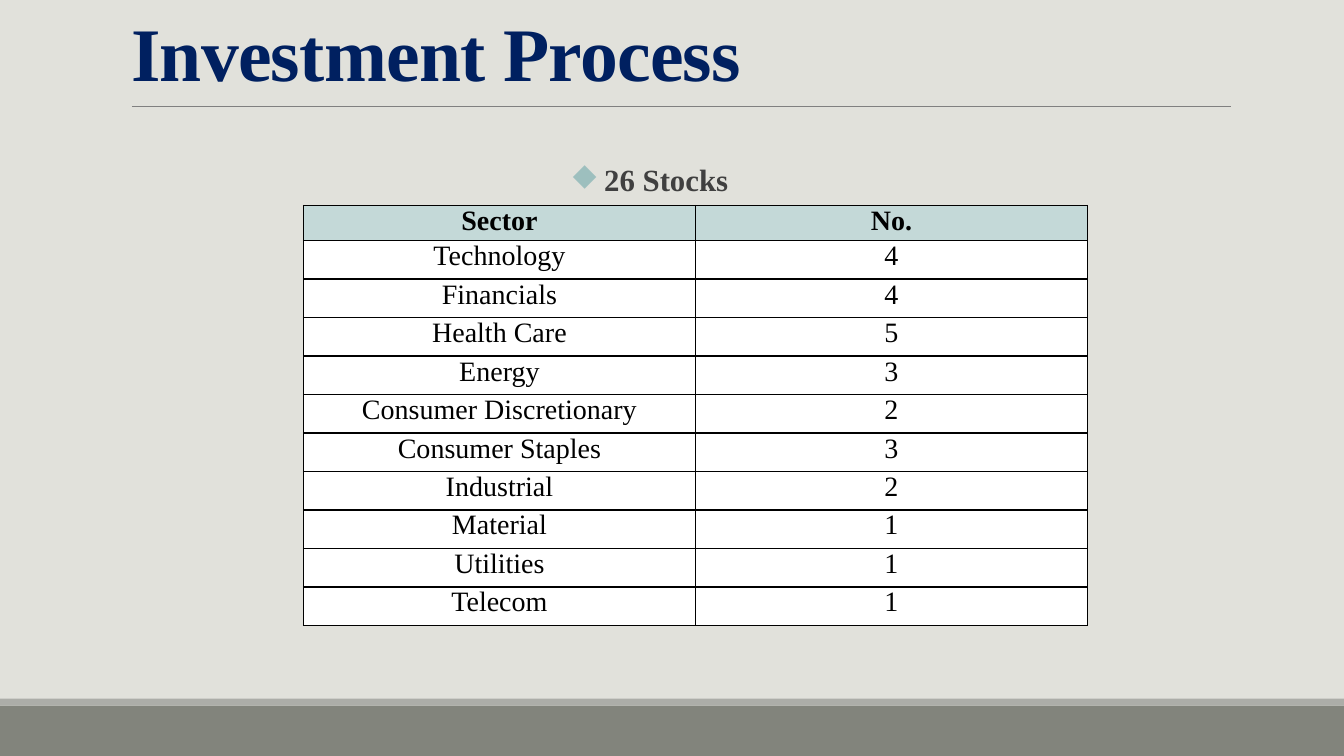
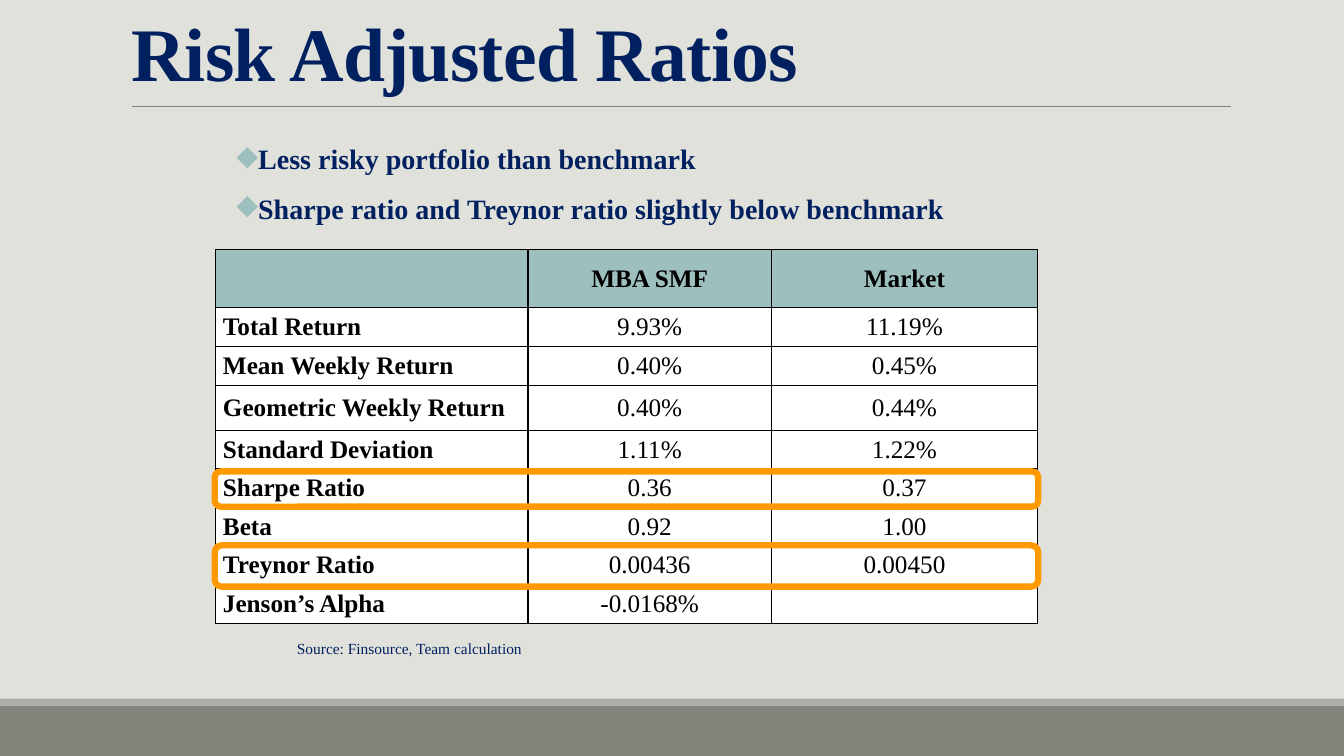
from dataclasses import dataclass

from lxml.etree import SubElement
from pptx import Presentation
from pptx.dml.color import RGBColor
from pptx.enum.shapes import MSO_CONNECTOR, MSO_SHAPE
from pptx.enum.text import MSO_ANCHOR, MSO_AUTO_SIZE, PP_ALIGN
from pptx.oxml import parse_xml
from pptx.oxml.ns import nsdecls, qn
from pptx.util import Pt


@dataclass(frozen=True)
class Theme:
    font: str = "Times New Roman"
    background: str = "E1E1DB"
    band: str = "82847C"
    band_edge: str = "ACADA8"
    rule: str = "808080"
    navy: str = "002060"
    gray: str = "404040"
    black: str = "000000"
    white: str = "FFFFFF"
    teal: str = "9DBFBE"
    pale_teal: str = "C4D9D8"
    orange: str = "FF9900"
    title_size: int = 54
    heading_size: int = 22
    text_size: int = 20
    ratio_size: int = 18
    source_size: int = 11


THEME = Theme()
SLIDE_WIDTH, SLIDE_HEIGHT = 960, 540
SECTORS = [
    ("Sector", "No."),
    ("Technology", "4"),
    ("Financials", "4"),
    ("Health Care", "5"),
    ("Energy", "3"),
    ("Consumer Discretionary", "2"),
    ("Consumer Staples", "3"),
    ("Industrial", "2"),
    ("Material", "1"),
    ("Utilities", "1"),
    ("Telecom", "1"),
]
RATIOS = [
    ("", "MBA SMF", "Market"),
    ("Total Return", "9.93%", "11.19%"),
    ("Mean Weekly Return", "0.40%", "0.45%"),
    ("Geometric Weekly Return", "0.40%", "0.44%"),
    ("Standard Deviation", "1.11%", "1.22%"),
    ("Sharpe Ratio", "0.36", "0.37"),
    ("Beta", "0.92", "1.00"),
    ("Treynor Ratio", "0.00436", "0.00450"),
    ("Jenson’s Alpha", "-0.0168%", ""),
]


def rgb(color):
    return RGBColor.from_string(color)


def points(*lengths):
    return [Pt(length) for length in lengths]


def style_paragraph(paragraph, size, color, bold=False, align=PP_ALIGN.LEFT):
    paragraph.alignment = align
    font = paragraph.font
    font.name = THEME.font
    font.size = Pt(size)
    font.bold = bold
    font.color.rgb = rgb(color)


def add_band(slide, top, height, color):
    band = slide.shapes.add_shape(
        MSO_SHAPE.RECTANGLE, *points(0, top, SLIDE_WIDTH, height))
    band.shadow.inherit = False
    band.fill.solid()
    band.fill.fore_color.rgb = rgb(color)
    band.line.fill.background()


def add_title_rule(slide):
    rule = slide.shapes.add_connector(
        MSO_CONNECTOR.STRAIGHT, *points(94.3, 76.2, 879, 76.2))
    rule.line.color.rgb = rgb(THEME.rule)
    rule.line.width = Pt(0.5)
    SubElement(rule._element.spPr, qn("a:effectLst"))


def add_titled_slide(presentation, text):
    """Add a slide with the shared bands, rule and title style."""
    slide = presentation.slides.add_slide(presentation.slide_layouts[5])
    add_band(slide, 504, 36, THEME.band)
    add_band(slide, 499, 5, THEME.band_edge)
    add_title_rule(slide)
    title = slide.shapes.title
    title.left, title.top, title.width, title.height = points(86.4, 4.3, 792, 68.4)
    frame = title.text_frame
    frame.text = text
    frame.auto_size = MSO_AUTO_SIZE.NONE
    frame.vertical_anchor = MSO_ANCHOR.BOTTOM
    paragraph = frame.paragraphs[0]
    style_paragraph(paragraph, THEME.title_size, THEME.navy, bold=True)
    paragraph.line_spacing = 0.85
    paragraph._p.pPr.get_or_add_defRPr().set("spc", "-50")
    return slide


def add_text_box(slide, box, lines, wrap=True):
    frame = slide.shapes.add_textbox(*points(*box)).text_frame
    frame.word_wrap = wrap
    frame.text = "\n".join(lines)
    return frame


def add_diamond_bullet(paragraph, line_spacing):
    paragraph.line_spacing = line_spacing
    paragraph.space_before = Pt(12)
    paragraph.space_after = Pt(2)
    properties = paragraph._p.get_or_add_pPr()
    properties.set("marL", str(Pt(7.2)))
    properties.set("indent", str(Pt(-7.2)))
    font_properties = properties.get_or_add_defRPr()
    for xml in (
        f'<a:buClr {nsdecls("a")}><a:srgbClr val="{THEME.teal}"/></a:buClr>',
        f'<a:buChar {nsdecls("a")} char="◆"/>',
    ):
        font_properties.addprevious(parse_xml(xml))


def add_cell_borders(cell):
    properties = cell._tc.get_or_add_tcPr()
    for side in ("lnL", "lnR", "lnT", "lnB"):
        properties.append(parse_xml(
            f'<a:{side} {nsdecls("a")} w="{Pt(1)}"><a:solidFill>'
            f'<a:srgbClr val="{THEME.black}"/></a:solidFill></a:{side}>'))


def style_cell(cell, text, fill, size, bold, align, anchor):
    cell.text = text
    cell.margin_left = cell.margin_right = Pt(5.4)
    cell.margin_top = cell.margin_bottom = 0
    cell.vertical_anchor = anchor
    add_cell_borders(cell)
    cell.fill.solid()
    cell.fill.fore_color.rgb = rgb(fill)
    style_paragraph(cell.text_frame.paragraphs[0], size, THEME.black, bold, align)


def add_grid(slide, rows, position, widths, heights, size, header_fill,
             anchor, row_labels=False):
    """Add a bordered table; row_labels makes the first column bold and left."""
    table = slide.shapes.add_table(
        len(rows), len(widths),
        *points(*position, sum(widths), sum(heights))).table
    table.first_row = table.horz_banding = False
    for column, width in zip(table.columns, widths):
        column.width = Pt(width)
    for row, height in zip(table.rows, heights):
        row.height = Pt(height)
    for row_index, row in enumerate(rows):
        is_header = row_index == 0
        for column_index, text in enumerate(row):
            is_label = row_labels and column_index == 0 and not is_header
            style_cell(
                table.cell(row_index, column_index), text,
                header_fill if is_header else THEME.white, size,
                is_header or is_label,
                PP_ALIGN.LEFT if is_label else PP_ALIGN.CENTER, anchor)


def add_highlight(slide, top, height):
    highlight = slide.shapes.add_shape(
        MSO_SHAPE.ROUNDED_RECTANGLE, *points(153.4, top, 588.2, height))
    highlight.shadow.inherit = False
    highlight.fill.background()
    highlight.line.color.rgb = rgb(THEME.orange)
    highlight.line.width = Pt(4.5)


def build_investment_process(presentation):
    slide = add_titled_slide(presentation, "Investment Process")
    frame = add_text_box(slide, (303, 118.8, 323.3, 28), [" 26 Stocks"])
    frame.margin_left = frame.margin_right = 0
    heading = frame.paragraphs[0]
    style_paragraph(heading, THEME.heading_size, THEME.gray, True, PP_ALIGN.CENTER)
    add_diamond_bullet(heading, 0.7)
    add_grid(slide, SECTORS, (216.8, 146.8), [280] * 2, [25] + [27.5] * 10,
             THEME.text_size, THEME.pale_teal, MSO_ANCHOR.TOP)


def build_risk_ratios(presentation):
    slide = add_titled_slide(presentation, "Risk Adjusted Ratios")
    findings = add_text_box(slide, (162, 100, 623.5, 65), [
        "Less risky portfolio than benchmark",
        "Sharpe ratio and Treynor ratio slightly below benchmark",
    ])
    for paragraph in findings.paragraphs:
        style_paragraph(paragraph, THEME.text_size, THEME.navy, bold=True)
        add_diamond_bullet(paragraph, 0.9)
    add_grid(slide, RATIOS, (153.9, 178.3), [223.2, 174, 190],
             [41.4] + [27.7] * 2 + [32.2] + [27.6] * 5,
             THEME.ratio_size, THEME.teal, MSO_ANCHOR.MIDDLE, row_labels=True)
    source = add_text_box(slide, (205, 453, 183, 21),
                          ["Source: Finsource, Team calculation"], wrap=False)
    style_paragraph(source.paragraphs[0], THEME.source_size, THEME.navy)
    add_highlight(slide, 336.7, 25.2)
    add_highlight(slide, 389.5, 29.5)


def main():
    presentation = Presentation()
    presentation.slide_width = Pt(SLIDE_WIDTH)
    presentation.slide_height = Pt(SLIDE_HEIGHT)
    background = presentation.slide_master.background.fill
    background.solid()
    background.fore_color.rgb = rgb(THEME.background)
    build_investment_process(presentation)
    build_risk_ratios(presentation)
    presentation.save("out.pptx")


if __name__ == "__main__":
    main()
